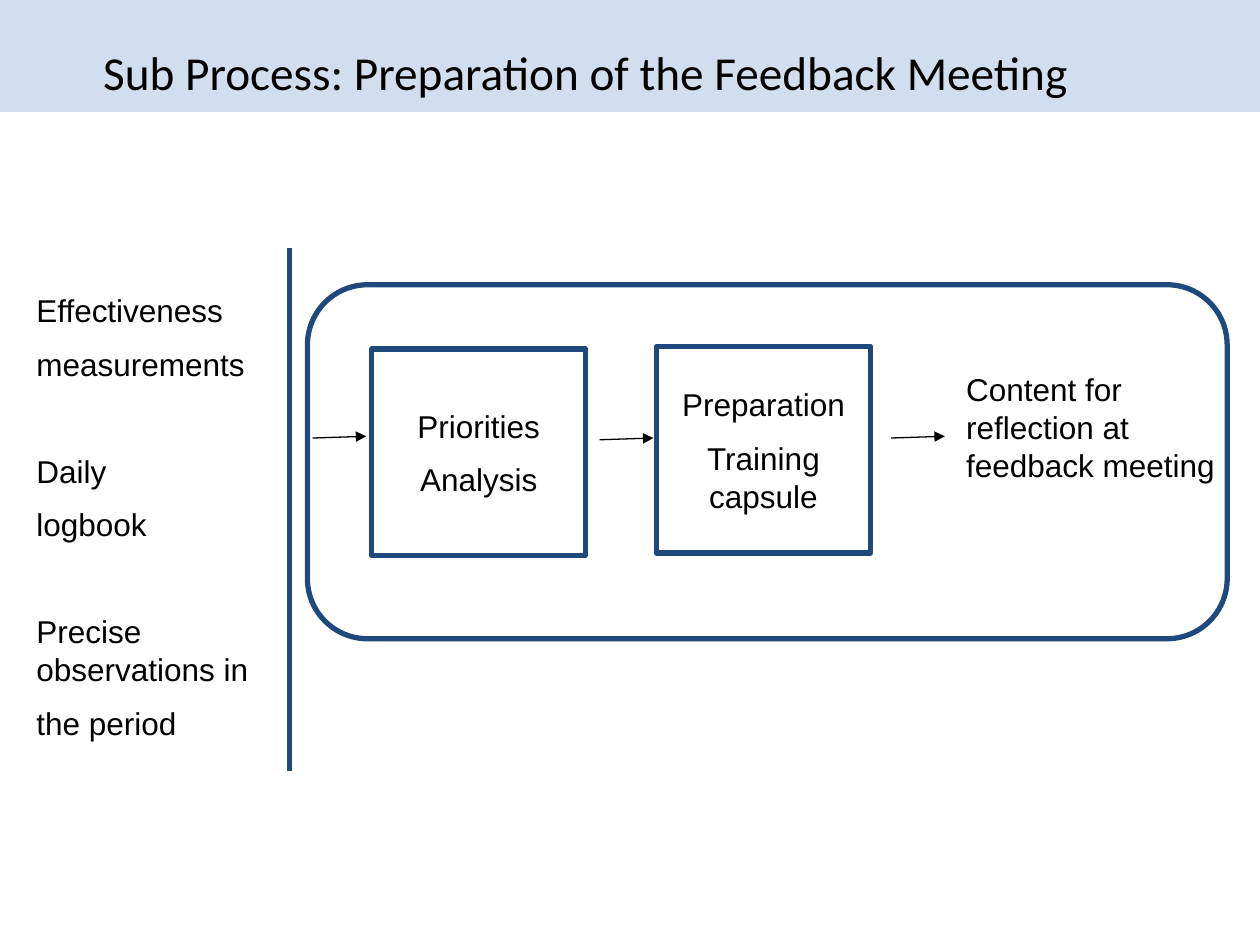
from pptx import Presentation
from pptx.dml.color import RGBColor
from pptx.enum.shapes import MSO_CONNECTOR, MSO_SHAPE
from pptx.enum.text import MSO_ANCHOR, MSO_AUTO_SIZE, PP_ALIGN
from pptx.oxml.ns import qn
from pptx.util import Pt
from lxml import etree

RECT, ROUNDED = MSO_SHAPE.RECTANGLE, MSO_SHAPE.ROUNDED_RECTANGLE
STRAIGHT = MSO_CONNECTOR.STRAIGHT
LEFT, CENTER = PP_ALIGN.LEFT, PP_ALIGN.CENTER
TOP, MIDDLE = MSO_ANCHOR.TOP, MSO_ANCHOR.MIDDLE

# Content
TITLE = "Sub Process: Preparation of the Feedback Meeting"
INPUTS = [
    ["Effectiveness", "measurements"],
    ["Daily", "logbook"],
    ["Precise observations in", "the period"],
]
STEPS = [  # left, top, lines
    (212.4, 199.4, ["Priorities", "Analysis"]),
    (375.1, 198, ["Preparation", "Training capsule"]),
]
OUTPUT = "Content for reflection at feedback meeting"
ARROWS = [(178.6, 250.3), (342.7, 251.3), (509.2, 250.3)]  # start points

# Theme
THEME = {
    "band": RGBColor(0xD1, 0xDE, 0xED),
    "outline": RGBColor(0x1F, 0x49, 0x7D),
    "paper": RGBColor(0xFF, 0xFF, 0xFF),
    "ink": RGBColor(0, 0, 0),
    "title_font": "Calibri", "title_size": 27,
    "body_font": "Arial", "body_size": 18,
    "outline_width": 3, "arrow_width": 0.75,
}
LINE_GAP, GROUP_GAP = 9, 39.6
STEP_WIDTH, STEP_HEIGHT = 122.4, 118
ARROW_RUN, ARROW_RISE = 30.7, 1


def write(shape, lines, font=THEME["body_font"], size=THEME["body_size"],
          align=LEFT, anchor=TOP, gaps=None, inset=None, wrap=True):
    frame = shape.text_frame
    frame.word_wrap = wrap
    frame.auto_size = MSO_AUTO_SIZE.NONE
    frame.vertical_anchor = anchor
    if inset is not None:
        frame.margin_left = frame.margin_right = Pt(inset)
        frame.margin_top = frame.margin_bottom = Pt(inset)
    for i, line in enumerate(lines):
        paragraph = frame.paragraphs[0] if i == 0 else frame.add_paragraph()
        paragraph.alignment = align
        paragraph.space_before = Pt(gaps[i] if gaps else LINE_GAP if i else 0)
        run = paragraph.add_run()
        run.text = line
        run.font.name, run.font.size = font, Pt(size)
        run.font.color.rgb = THEME["ink"]


def add_box(slide, kind, left, top, width, height, fill=None, outlined=True):
    box = slide.shapes.add_shape(kind, Pt(left), Pt(top), Pt(width), Pt(height))
    box.shadow.inherit = False
    if fill is None:
        box.fill.background()
    else:
        box.fill.solid()
        box.fill.fore_color.rgb = fill
    if outlined:
        box.line.color.rgb = THEME["outline"]
        box.line.width = Pt(THEME["outline_width"])
    else:
        box.line.fill.background()
    return box


def add_line(slide, x1, y1, x2, y2, color, width, arrow=False):
    line = slide.shapes.add_connector(STRAIGHT, Pt(x1), Pt(y1), Pt(x2), Pt(y2))
    line.line.color.rgb = color
    line.line.width = Pt(width)
    if arrow:
        etree.SubElement(line.line._get_or_add_ln(), qn("a:tailEnd"), type="triangle")
    etree.SubElement(line._element.spPr, qn("a:effectLst"))


def main():
    deck = Presentation()
    deck.slide_width, deck.slide_height = Pt(720), Pt(540)
    slide = deck.slides.add_slide(deck.slide_layouts[5])

    # Title over its band
    band = add_box(slide, RECT, 0, 0, 720, 64, THEME["band"], outlined=False)
    slide.shapes._spTree.insert(2, band._element)
    title = slide.shapes.title
    title.left, title.top, title.width, title.height = Pt(55), Pt(24.5), Pt(559), Pt(32.4)
    write(title, [TITLE], font=THEME["title_font"], size=THEME["title_size"],
          align=CENTER, anchor=MIDDLE, inset=0, wrap=False)

    # Process frame
    frame = add_box(slide, ROUNDED, 175.7, 162.7, 525.6, 202.3, THEME["paper"])
    frame.adjustments[0] = 0.17

    # Inputs and divider
    inputs = slide.shapes.add_textbox(Pt(13.7), Pt(162.7), Pt(162), Pt(278))
    gaps = [(LINE_GAP if i else GROUP_GAP if g else 0)
            for g, group in enumerate(INPUTS) for i in range(len(group))]
    write(inputs, sum(INPUTS, []), gaps=gaps)
    add_line(slide, 165.6, 141.8, 165.6, 440.6, THEME["outline"], THEME["outline_width"])

    # Steps
    for left, top, lines in STEPS:
        step = add_box(slide, RECT, left, top, STEP_WIDTH, STEP_HEIGHT)
        write(step, lines, align=CENTER, anchor=MIDDLE)

    # Output
    output = slide.shapes.add_textbox(Pt(545), Pt(208.1), Pt(158.4), Pt(72))
    write(output, [OUTPUT])

    # Flow arrows
    for x, y in ARROWS:
        add_line(slide, x, y, x + ARROW_RUN, y - ARROW_RISE,
                 THEME["ink"], THEME["arrow_width"], arrow=True)

    deck.save("out.pptx")


if __name__ == "__main__":
    main()
